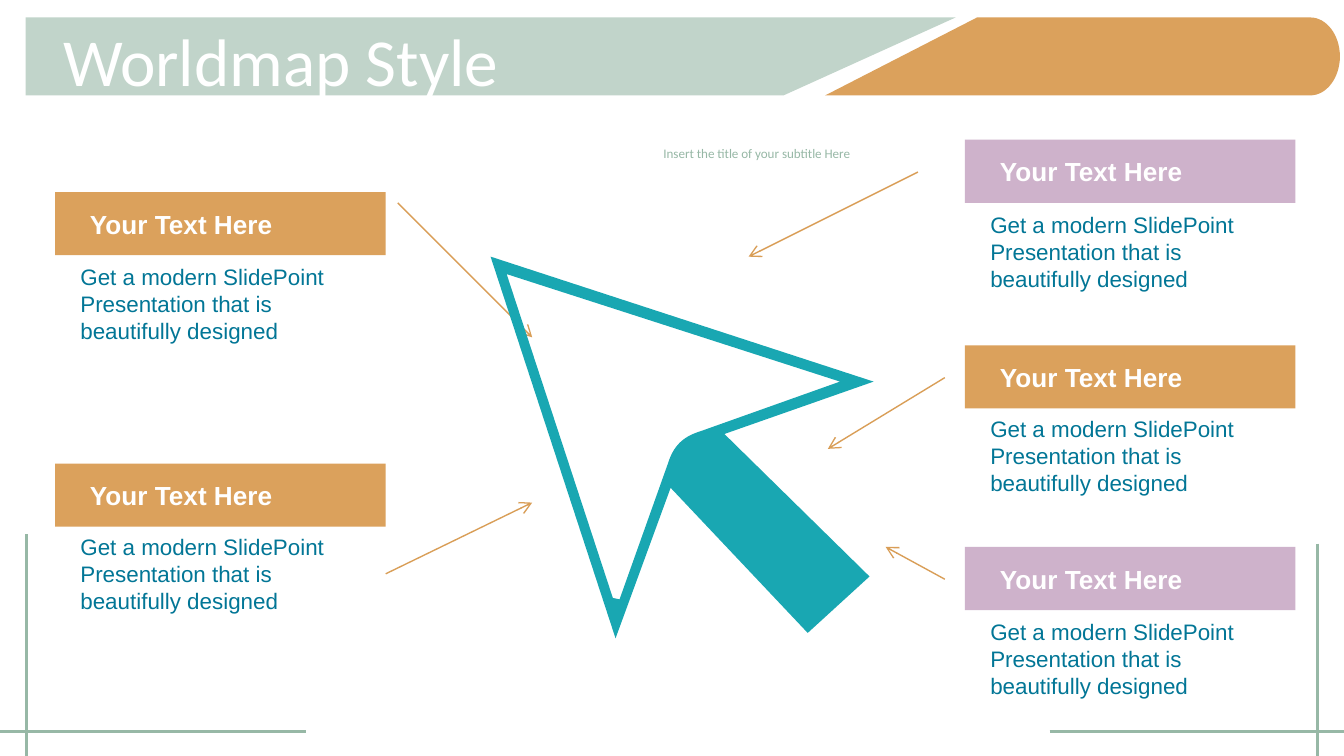
from dataclasses import dataclass

from lxml import etree
from pptx import Presentation
from pptx.dml.color import RGBColor
from pptx.enum.shapes import MSO_CONNECTOR, MSO_SHAPE
from pptx.enum.text import MSO_ANCHOR, PP_ALIGN
from pptx.oxml.ns import qn
from pptx.util import Inches, Pt

STRAIGHT = MSO_CONNECTOR.STRAIGHT
RECT = MSO_SHAPE.RECTANGLE
MIDDLE, TOP = MSO_ANCHOR.MIDDLE, MSO_ANCHOR.TOP
LEFT, CENTER = PP_ALIGN.LEFT, PP_ALIGN.CENTER


@dataclass(frozen=True)
class Theme:
    white: str = "FFFFFF"
    sage: str = "C1D4CA"
    moss: str = "97B8A6"
    amber: str = "DBA15C"
    mauve: str = "CEB2CB"
    teal: str = "19A7B2"
    blue: str = "027696"
    arrow: str = "D99E57"
    head: str = "Calibri"
    text: str = "Arial"
    title: float = 36
    sub: float = 7
    label: float = 14
    body: float = 12
    rule: float = 1.64
    thin: float = 0.75


THEME = Theme()
WIDE = 10
HIGH = WIDE * 9 / 16
LABEL = "Your Text Here"
BODY = "Get a modern SlidePoint Presentation that is beautifully designed"


def place(shape, box):
    shape.left, shape.top, shape.width, shape.height = map(Inches, box)


def paint(shape, color):
    shape.shadow.inherit = False
    shape.fill.solid()
    shape.fill.fore_color.rgb = RGBColor.from_string(color)
    shape.line.fill.background()


def write(shape, words, font, size, color, bold=False, align=LEFT,
          anchor=TOP, inset=(0.1, 0.05, 0.1, 0.05), space=None):
    frame = shape.text_frame
    frame.word_wrap = True
    frame.vertical_anchor = anchor
    (frame.margin_left, frame.margin_top,
     frame.margin_right, frame.margin_bottom) = map(Inches, inset)
    para = frame.paragraphs[0]
    para.alignment = align
    if space:
        para.line_spacing = space
    run = para.add_run()
    run.text = words
    run.font.name, run.font.size, run.font.bold = font, Pt(size), bold
    run.font.color.rgb = RGBColor.from_string(color)


def curve(a, b, c, d, steps=16):
    """Points along a cubic Bezier, both ends included."""
    points = []
    for i in range(steps + 1):
        t = i / steps
        s = 1 - t
        points.append(tuple(
            s**3 * p + 3 * s * s * t * q + 3 * s * t * t * r + t**3 * u
            for p, q, r, u in zip(a, b, c, d)))
    return points


def outline(slide, origin, loops, color):
    """Fill closed loops of points given relative to origin."""
    left, top = origin
    loops = [[(Inches(left + x), Inches(top + y)) for x, y in loop]
             for loop in loops]
    pen = slide.shapes.build_freeform(*loops[0][0], scale=1.0)
    for i, loop in enumerate(loops):
        if i:
            pen.move_to(*loop[0])
        pen.add_line_segments(loop[1:], close=True)
    paint(pen.convert_to_shape(), color)


def stroke(slide, start, end, color, width, arrow=False):
    line = slide.shapes.add_connector(STRAIGHT, *map(Inches, start + end))
    line.line.color.rgb = RGBColor.from_string(color)
    line.line.width = Pt(width)
    if arrow:
        pen = line.line._get_or_add_ln()
        etree.SubElement(pen, qn("a:tailEnd"), type="arrow")
    etree.SubElement(line.element.spPr, qn("a:effectLst"))


def banner(slide, box):
    left, top, wide, high = box
    outline(slide, (left, top),
            [[(0, 0), (6.92, 0), (5.64, high), (0, high)]], THEME.sage)
    mid, bend = high / 2, wide - 0.22
    cap = (curve((bend, 0), (wide - 0.1, 0), (wide, 0.13), (wide, mid))
           + curve((wide, mid), (wide, high - 0.13),
                   (wide - 0.1, high), (bend, high))[1:])
    outline(slide, (left, top),
            [[(5.95, high), (7.08, 0)] + cap], THEME.amber)
    title = slide.shapes.title
    title.element.getparent().append(title.element)  # in front of the band
    place(title, (left, top - 0.05, 3.8, 0.64))
    write(title, "Worldmap Style", THEME.head, THEME.title, THEME.white,
          align=CENTER, anchor=MIDDLE, inset=(0.1,) * 4, space=1.15)


def corners(slide, box):
    left, top, wide, high = box
    right, base = left + wide, top + high
    for start, end in (
            ((right - 0.2, base - 1.58), (right - 0.2, base)),
            ((right - 2.19, base - 0.18), (right, base - 0.18)),
            ((left + 0.2, base - 1.65), (left + 0.2, base)),
            ((left, base - 0.18), (left + 2.28, base - 0.18))):
        stroke(slide, start, end, THEME.moss, THEME.rule)


def subtitle(slide, box):
    text = slide.shapes.add_textbox(*map(Inches, box))
    write(text, "Insert the title of your subtitle Here", THEME.head,
          THEME.sub, THEME.moss, align=CENTER, anchor=MIDDLE,
          inset=(0.22, 0.1, 0.1, 0.1), space=0.95)


def card(slide, box, drop, color):
    """Label bar with its text starting at the given drop below the top."""
    left, top, wide, high = box
    text = slide.shapes.add_textbox(*map(Inches, (
        left + 0.09, top + drop, wide - 0.09, high - drop)))
    write(text, BODY, THEME.text, THEME.body, THEME.blue)
    label = slide.shapes.add_shape(
        RECT, *map(Inches, (left, top, wide, 0.47)))
    paint(label, color)
    write(label, LABEL, THEME.text, THEME.label, THEME.white, bold=True,
          anchor=MIDDLE, inset=(0.26, 0.05, 0.1, 0.05))


def cursor(slide, box):
    left, top, wide, high = box
    outer = [(0, 0), (wide, 0.93), (1.74, 1.32), (2.82, 2.38),
             (2.36, 2.8), (1.34, 1.72), (0.93, high)]
    notch = curve((1.32, 1.54), (1.36, 1.41), (1.43, 1.34), (1.56, 1.3))
    inner = [(0.91, 2.54), (0.96, 2.55)] + notch + [(2.6, 0.93), (0.12, 0.13)]
    outline(slide, (left, top), [outer, inner], THEME.teal)


def main():
    deck = Presentation()
    deck.slide_width, deck.slide_height = Inches(WIDE), Inches(HIGH)
    slide = deck.slides.add_slide(deck.slide_layouts[5])
    fill = slide.background.fill
    fill.solid()
    fill.fore_color.rgb = RGBColor.from_string(THEME.white)

    banner(slide, (0.19, 0.13, 9.78, 0.58))
    corners(slide, (0, 0, WIDE, HIGH))
    subtitle(slide, (1.14, 0.99, 8.86, 0.31))
    for left, top, drop, color in (
            (0.41, 1.43, 0.48, THEME.amber), (0.41, 3.45, 0.47, THEME.amber),
            (7.18, 1.04, 0.48, THEME.mauve), (7.18, 2.57, 0.47, THEME.amber),
            (7.18, 4.07, 0.48, THEME.mauve)):
        card(slide, (left, top, 2.46, drop + 0.71), drop, color)
    for start, end in (
            ((2.96, 1.51), (3.96, 2.51)), ((6.83, 1.28), (5.57, 1.91)),
            ((7.03, 2.81), (6.16, 3.34)), ((7.03, 4.31), (6.59, 4.07)),
            ((2.87, 4.27), (3.96, 3.74))):
        stroke(slide, start, end, THEME.arrow, THEME.thin, arrow=True)
    cursor(slide, (3.65, 1.91, 2.85, 2.84))
    deck.save("out.pptx")


if __name__ == "__main__":
    main()
